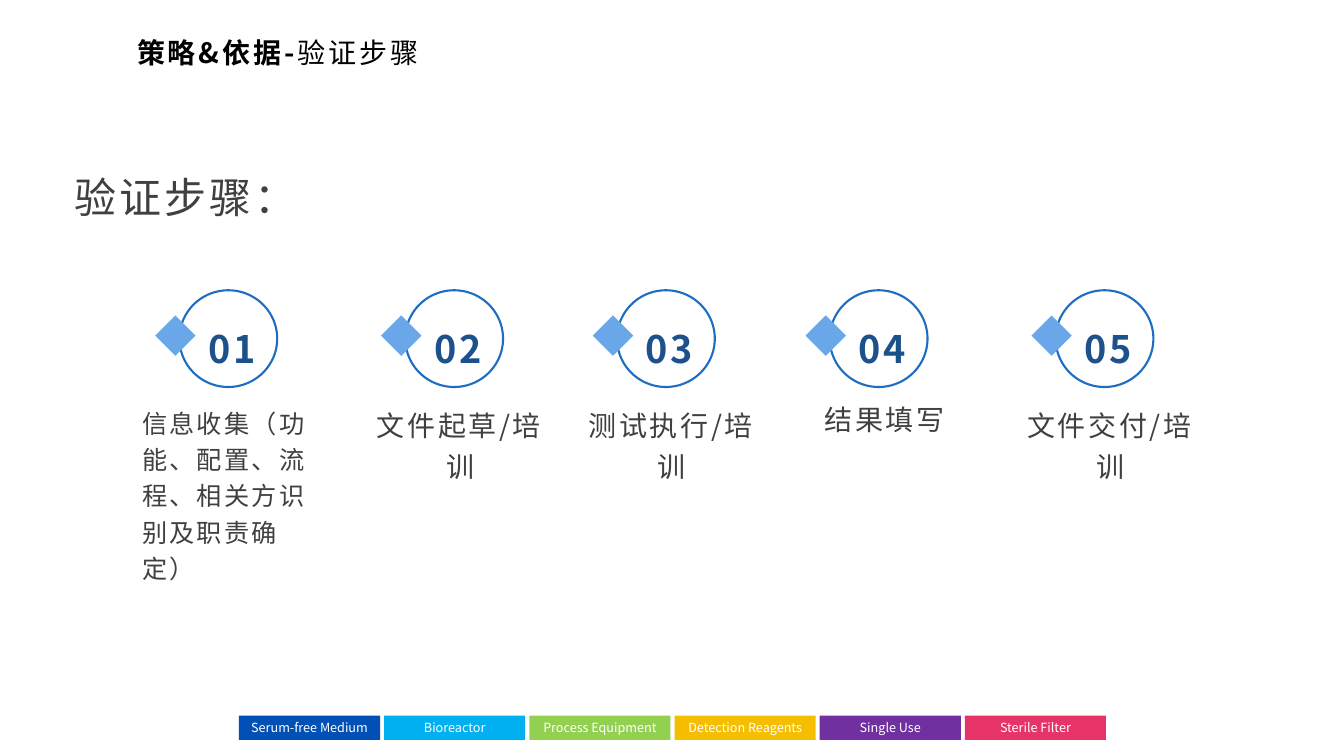
from pptx import Presentation
from pptx.dml.color import RGBColor
from pptx.enum.shapes import MSO_SHAPE as SHAPE
from pptx.enum.text import MSO_ANCHOR as ANCHOR, MSO_AUTO_SIZE as AUTO, PP_ALIGN as ALIGN
from pptx.oxml.ns import qn
from pptx.util import Inches, Pt
from lxml.etree import SubElement

TITLE = [("策略&依据-", True), ("验证步骤", False)]
HEADING = "验证步骤："
STEPS = [
    {"x": 1.78, "h": 1.84, "size": 18, "spc": 1.6, "line": 1.2, "align": ALIGN.LEFT,
     "text": "信息收集（功能、配置、流程、相关方识别及职责确定）"},
    {"x": 4.02, "h": 1.58, "text": "文件起草/培训"},
    {"x": 6.12, "h": 2.74, "text": "测试执行/培训"},
    {"x": 8.23, "h": 2.74, "line": 1.0, "text": "结果填写"},
    {"x": 10.47, "h": 2.74, "text": "文件交付/培训"},
]
FOOTER = [
    ("Serum-free Medium", "0050B5"),
    ("Bioreactor", "00B0F0"),
    ("Process Equipment", "92D050"),
    ("Detection Reagents", "F6BE00"),
    ("Single Use", "7030A0"),
    ("Sterile Filter", "E73468"),
]
COLORS = {"title": "000000", "body": "404040", "ring": "1D6DC2",
          "number": "1D518C", "diamond": "69A7E9", "white": "FFFFFF"}
FONT = "Noto Sans CJK SC"
FOOTER_X, FOOTER_PITCH = 2.37, 1.44


def rgb(name):
    return RGBColor.from_string(COLORS.get(name, name))


def place(sp, x, y, w, h):
    sp.left, sp.top, sp.width, sp.height = map(Inches, (x, y, w, h))


def frame(sp, anchor=ANCHOR.TOP, side=0, edge=0):
    tf = sp.text_frame
    tf.word_wrap = True
    tf.auto_size = AUTO.NONE
    tf.vertical_anchor = anchor
    tf.margin_left = tf.margin_right = Inches(side)
    tf.margin_top = tf.margin_bottom = Inches(edge)
    return tf.paragraphs[0]


def style(p, size, color, align=ALIGN.LEFT, spc=0, bold=False, line=1.0, after=0):
    p.alignment = align
    p.line_spacing = line
    p.space_before, p.space_after = Pt(0), Pt(after)
    f = p.font
    f.name, f.size, f.bold = FONT, Pt(size), bold
    f.color.rgb = rgb(color)
    props = p._p.pPr.find(qn("a:defRPr"))
    props.set("spc", str(round(spc * 100)))
    SubElement(props, qn("a:ea")).set("typeface", FONT)


def add_shape(s, kind, x, y, w, h, fill):
    sp = s.shapes.add_shape(kind, *map(Inches, (x, y, w, h)))
    sp.shadow.inherit = False
    sp.fill.solid()
    sp.fill.fore_color.rgb = rgb(fill)
    sp.line.fill.background()
    return sp


def add_text(s, x, y, w, h, text, anchor=ANCHOR.TOP, **fmt):
    p = frame(s.shapes.add_textbox(*map(Inches, (x, y, w, h))), anchor)
    p.text = text
    style(p, **fmt)


def add_step(s, number, step):
    x = step["x"]
    ring = s.shapes.add_shape(SHAPE.ARC, *map(Inches, (x, 2.88, 0.97, 0.96)))
    ring.shadow.inherit = False
    ring.adjustments[0], ring.adjustments[1] = 116.19, 102.95
    ring.fill.background()
    ring.line.color.rgb = rgb("ring")
    ring.line.width = Pt(1.5)
    add_text(s, x - 0.37, 3.99, 1.83, step["h"], step["text"],
             size=step.get("size", 20), color="body", spc=step.get("spc", 1.8),
             align=step.get("align", ALIGN.CENTER), line=step.get("line", 1.2), after=8)
    add_text(s, x + 0.15, 3, 0.74, 0.68, f"{number:02d}", ANCHOR.MIDDLE,
             size=27, color="number", spc=2, bold=True, align=ALIGN.CENTER, line=1.5)
    add_shape(s, SHAPE.DIAMOND, x - 0.24, 3.13, 0.4, 0.4, "diamond")


def main():
    prs = Presentation()
    prs.slide_width, prs.slide_height = Inches(13.33), Inches(7.5)
    s = prs.slides.add_slide(prs.slide_layouts[1])

    title, body = s.placeholders
    place(title, 1.29, 0.18, 7.29, 0.67)
    p = frame(title, ANCHOR.MIDDLE, 0.07, 0.03)
    for text, bold in TITLE:
        r = p.add_run()
        r.text = text
        r.font.bold = bold
    style(p, 20, "title", spc=2)

    place(body, 0.67, 1.67, 12, 0.83)
    p = frame(body, side=0.07, edge=0.03)
    p.text = HEADING
    props = p._p.get_or_add_pPr()
    props.set("marL", "0")
    props.set("indent", "0")
    SubElement(props, qn("a:buNone"))
    style(p, 30, "body", spc=2.2, after=8)

    for number, step in enumerate(STEPS, 1):
        add_step(s, number, step)

    for i, (text, color) in enumerate(FOOTER):
        sp = add_shape(s, SHAPE.RECTANGLE, FOOTER_X + i * FOOTER_PITCH, 7.1, 1.4, 0.24, color)
        p = frame(sp, ANCHOR.MIDDLE)
        p.text = text
        style(p, 9, "white", ALIGN.CENTER)

    prs.save("out.pptx")


if __name__ == "__main__":
    main()
